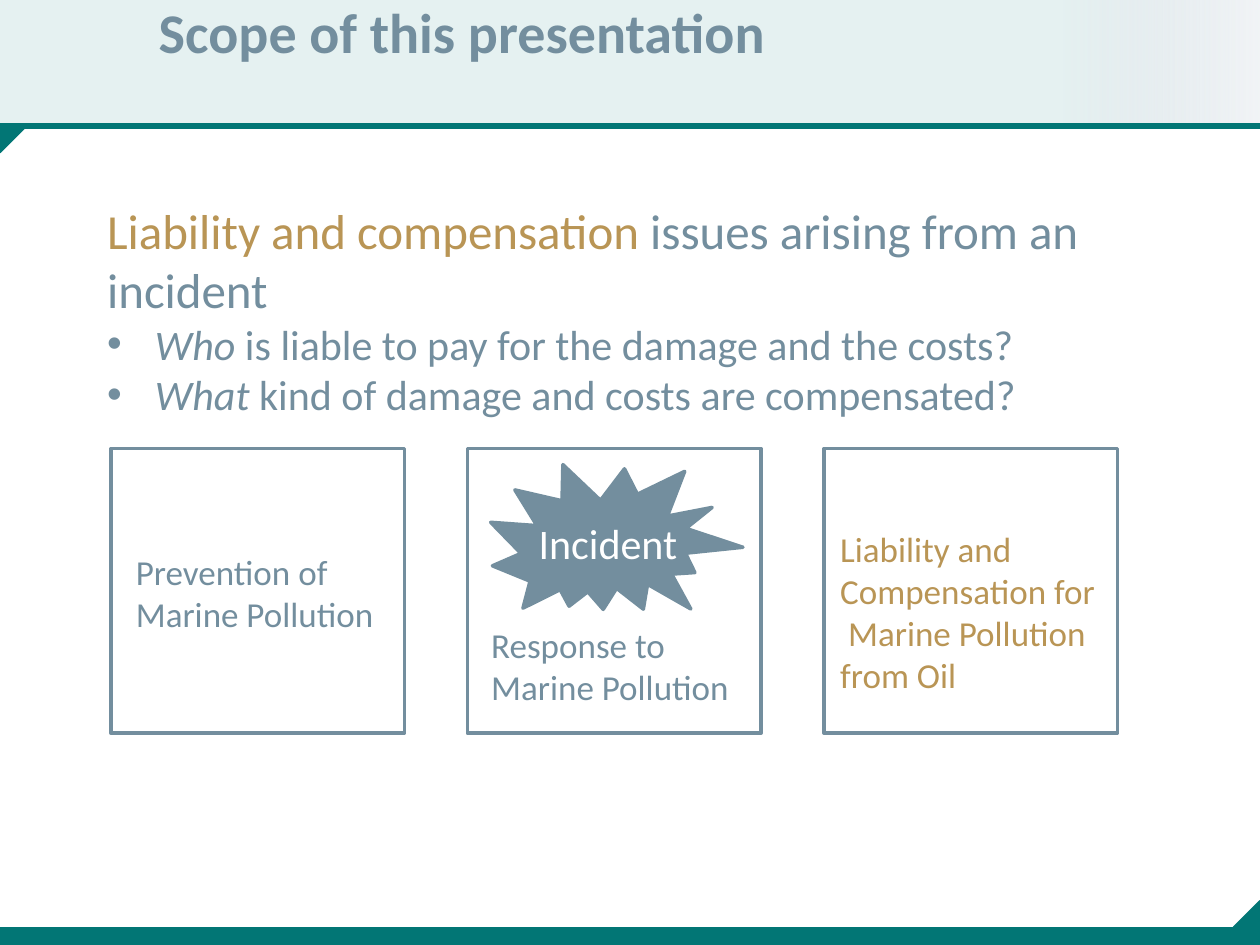
import pptx
import pptx.dml.color
import pptx.enum.dml
import pptx.enum.shapes
import pptx.enum.text
import pptx.oxml
import pptx.oxml.ns
import pptx.util
from lxml import etree

Inches = pptx.util.Inches
Pt = pptx.util.Pt
Shape = pptx.enum.shapes.MSO_SHAPE
Align = pptx.enum.text.PP_ALIGN
Anchor = pptx.enum.text.MSO_ANCHOR
qn = pptx.oxml.ns.qn

COLORS = {
    "slate": "738E9E",
    "gold": "B99555",
    "teal": "027675",
    "mint": "E5F1F1",
    "mist": "D0D9E1",
    "white": "FFFFFF",
}


def rgb(name):
    return pptx.dml.color.RGBColor.from_string(COLORS[name])


class SlideBuilder:
    font_name = "Calibri"

    def __init__(self, slide):
        self.slide = slide
        self.shapes = slide.shapes

    def format_run(self, run, size, color, bold=False, italic=False):
        run.font.name = self.font_name
        run.font.size = Pt(size)
        run.font.bold = bold
        run.font.italic = italic
        run.font.color.rgb = rgb(color)

    def place(self, placeholder, left, top, width, height, anchor):
        """Move a placeholder in front of the decoration and position it."""
        self.shapes._spTree.append(placeholder._element)
        placeholder.left, placeholder.top = Inches(left), Inches(top)
        placeholder.width, placeholder.height = Inches(width), Inches(height)
        frame = placeholder.text_frame
        frame.auto_size = pptx.enum.text.MSO_AUTO_SIZE.NONE
        frame.vertical_anchor = anchor
        return frame

    def title(self, text, *box):
        frame = self.place(self.shapes.title, *box, Anchor.MIDDLE)
        frame.text = text
        paragraph = frame.paragraphs[0]
        paragraph.alignment = Align.LEFT
        paragraph.line_spacing = 0.8
        self.format_run(paragraph.runs[0], 32, "slate", bold=True)

    def body(self, paragraphs, *box):
        """Each paragraph is (bulleted, size, [(text, color, italic), ...])."""
        frame = self.place(self.slide.placeholders[1], *box, Anchor.TOP)
        for number, (bulleted, size, runs) in enumerate(paragraphs):
            paragraph = frame.add_paragraph() if number else frame.paragraphs[0]
            paragraph.space_before = Pt(0)
            properties = paragraph._p.get_or_add_pPr()
            indent = Inches(0.38) if bulleted else 0
            properties.set("marL", str(indent))
            properties.set("indent", str(-indent))
            if bulleted:
                etree.SubElement(properties, qn("a:buFont"), typeface="Arial")
                etree.SubElement(properties, qn("a:buChar"), char="•")
            else:
                etree.SubElement(properties, qn("a:buNone"))
            for text, color, italic in runs:
                run = paragraph.add_run()
                run.text = text
                self.format_run(run, size, color, italic=italic)

    def label(self, text, left, top, width, height, size, color, align=Align.LEFT):
        box = self.shapes.add_textbox(
            Inches(left), Inches(top), Inches(width), Inches(height))
        box.text_frame.word_wrap = True
        box.text_frame.text = text
        paragraph = box.text_frame.paragraphs[0]
        paragraph.alignment = align
        for run in paragraph.runs:
            self.format_run(run, size, color)

    def shape(self, kind, left, top, width, height, fill=None, line=None,
              weight=2, rotation=0, flip=None):
        shape = self.shapes.add_shape(
            kind, Inches(left), Inches(top), Inches(width), Inches(height))
        shape.shadow.inherit = False
        shape.rotation = rotation
        if fill:
            shape.fill.solid()
            shape.fill.fore_color.rgb = rgb(fill)
        else:
            shape.fill.background()
        if line:
            shape.line.color.rgb = rgb(line)
            shape.line.width = Pt(weight)
        else:
            shape.line.fill.background()
        if flip:
            shape._element.spPr.find(qn("a:xfrm")).set(flip, "1")
        return shape

    def fading_band(self, left, top, width, height):
        band = self.shape(Shape.RECTANGLE, left, top, width, height)
        band.fill.gradient()
        band.fill.gradient_angle = 0
        solid, faded = band.fill.gradient_stops
        solid.position, solid.color.rgb = 0.84, rgb("mint")
        faded.position, faded.color.rgb = 1, rgb("mist")
        mist = band._element.spPr.findall(".//" + qn("a:srgbClr"))[-1]
        etree.SubElement(mist, qn("a:alpha"), val="28000")

    def rule(self, y, weight):
        line = self.shapes.add_connector(
            pptx.enum.shapes.MSO_CONNECTOR.STRAIGHT,
            Inches(-0.02), Inches(y), Inches(10.02), Inches(y))
        line.line.color.rgb = rgb("teal")
        line.line.width = Pt(weight)
        etree.SubElement(line._element.spPr, qn("a:effectLst"))


def main():
    prs = pptx.Presentation()
    prs.slide_width, prs.slide_height = Inches(10), Inches(7.5)
    page = SlideBuilder(prs.slides.add_slide(prs.slide_layouts[1]))

    # Header band, rules and corner triangles
    page.fading_band(-0.01, 0, 10.01, 1)
    for left, top, flip, rule_y, weight in [
            (0, 1, "flipV", 1, 3), (9.79, 7.15, "flipH", 7.43, 10)]:
        page.shape(Shape.RIGHT_TRIANGLE, left, top, 0.21, 0.21,
                   fill="teal", line="teal", weight=1, flip=flip)
        page.rule(rule_y, weight)

    # Title and questions
    page.title("Scope of this presentation", 1.16, 0.05, 7.43, 0.5)
    page.body([
        (False, 28, [("Liability and compensation ", "gold", False),
                     ("issues arising from an incident", "slate", False)]),
        (True, 24, [("Who", "slate", True),
                    (" is liable to pay for the damage and the costs?", "slate", False)]),
        (True, 24, [("What ", "slate", True),
                    ("kind of damage and costs are compensated?", "slate", False)]),
    ], 0.75, 1.54, 8.5, 1.85)

    # Three stages in equal boxes
    stages = [
        ("Prevention of Marine Pollution", 0.98, 4.32, 2.14, 0.77, "slate"),
        ("Response to\vMarine Pollution", 3.8, 4.9, 2.14, 0.77, "slate"),
        ("Liability and Compensation for\v Marine Pollution from Oil",
         6.57, 4.14, 2.26, 1.45, "gold"),
    ]
    for column, (text, left, top, width, height, color) in enumerate(stages):
        page.label(text, left, top, width, height, 20, color)
        page.shape(Shape.RECTANGLE, 0.88 + 2.83 * column, 3.56, 2.33, 2.26,
                   line="slate")

    # Incident burst
    page.shape(Shape.EXPLOSION2, 3.89, 3.6, 1.97, 1.42,
               fill="slate", line="slate", rotation=17.4)
    page.label("Incident", 4.13, 4.06, 1.39, 0.47, 24, "white", Align.CENTER)

    prs.save("out.pptx")


if __name__ == "__main__":
    main()
